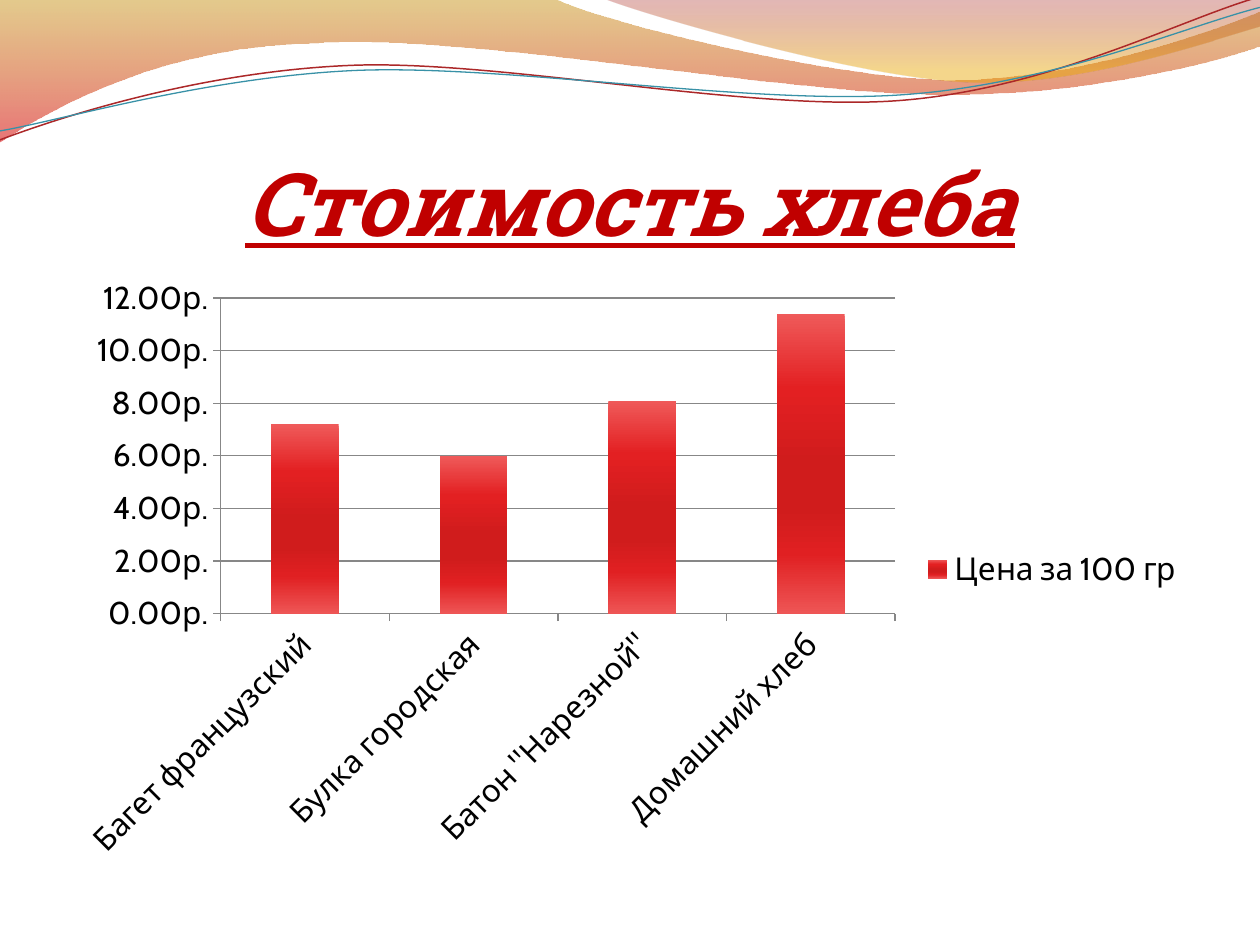
import lxml.etree
import pptx
import pptx.chart.data
import pptx.dml.color
import pptx.enum.chart
import pptx.enum.text
import pptx.oxml.ns
import pptx.util
from pptx.util import Cm, Pt

qn = pptx.oxml.ns.qn

# Waves in cm: a start point, then segments of one point (line) or three (Bezier curve).
ORANGE_WAVE = [
    [(0, 0)],
    [(11.18, -0.03)],
    [(12.09, 0.43), (16.87, 1.6), (19.25, 1.6)],
    [(21.67, 1.6), (24.33, 0.66), (25.4, 0.23)],
    [(25.43, 0.91)],
    [(24.97, 1.12), (22.1, 1.93), (18.95, 1.9)],
    [(15.8, 1.9), (9.7, 0.71), (6.53, 0.86)],
    [(3.28, 0.91), (1.17, 2.11), (-0.03, 2.87)],
    [(0, 0)],
]
YELLOW_WAVE = [
    [(12.17, -0.03)],
    [(12.93, 0.28), (17.32, 1.57), (19.53, 1.65)],
    [(21.74, 1.75), (24.41, 0.81), (25.4, 0.53)],
    [(25.4, 0)],
    [(12.17, -0.03)],
]
RED_LINE = [
    [(0, 2.82)],
    [(1.22, 2.36), (4.01, 1.45), (7.04, 1.32)],
    [(10.03, 1.19), (15.06, 2.26), (18.11, 2.03)],
    [(21.16, 1.8), (23.83, 0.38), (25.35, -0.05)],
]
TEAL_LINE = [
    [(0, 2.64)],
    [(1.19, 2.44), (4.17, 1.55), (7.19, 1.42)],
    [(10.24, 1.3), (15.16, 2.13), (18.21, 1.91)],
    [(21.23, 1.7), (23.9, 0.53), (25.4, 0.15)],
]
BAR_STOPS = [(0, "EF5A5A", 100), (25, "E32022", 100), (50, "D01C1C", 100),
             (65, "D01C1C", 100), (80, "E02022", 100), (100, "EE5555", 100)]
PRICES = {
    "Багет французский": 7.2,
    "Булка городская": 6,
    'Батон "Нарезной"': 8.1,
    "Домашний хлеб": 11.4,
}


def rgb(value):
    return pptx.dml.color.RGBColor.from_string(value)


def set_gradient(fill, element, stops):
    """Fill from top to bottom with (position %, colour, opacity %) stops."""
    fill.gradient()
    fill.gradient_angle = 270
    gs_list = next(element.iter(qn("a:gsLst")))
    gs_list.clear()
    for position, color, opacity in stops:
        gs = lxml.etree.SubElement(gs_list, qn("a:gs"), pos=str(position * 1000))
        clr = lxml.etree.SubElement(gs, qn("a:srgbClr"), val=color)
        if opacity < 100:
            lxml.etree.SubElement(clr, qn("a:alpha"), val=str(opacity * 1000))


def add_path(slide, outline, close):
    """Build a freeform through all points, then join each triple into a Bezier curve."""
    points = [(Cm(x), Cm(y)) for segment in outline for x, y in segment]
    builder = slide.shapes.build_freeform(*points[0])
    builder.add_line_segments(points[1:], close=close)
    sp = builder.convert_to_shape()
    sp.shadow.inherit = False
    lines = iter(list(sp._element.iter(qn("a:lnTo"))))
    for segment in outline[1:]:
        line = next(lines)
        if len(segment) == 3:
            curve = lxml.etree.Element(qn("a:cubicBezTo"))
            line.addprevious(curve)
            for part in (line, next(lines), next(lines)):
                curve.append(part[0])
                part.getparent().remove(part)
    return sp


def add_wave(slide, outline, stops):
    sp = add_path(slide, outline, close=True)
    set_gradient(sp.fill, sp._element, stops)
    sp.line.fill.background()


def add_wave_line(slide, outline, color, width):
    sp = add_path(slide, outline, close=False)
    sp.fill.background()
    sp.line.color.rgb = rgb(color)
    sp.line.width = Pt(width)


def set_title(slide, text):
    title = slide.shapes.title
    title.left, title.top, title.width, title.height = Cm(1.27), Cm(1.95), Cm(22.86), Cm(3.18)
    tf = title.text_frame
    tf.text = text
    tf.auto_size = pptx.enum.text.MSO_AUTO_SIZE.NONE
    tf.vertical_anchor = pptx.enum.text.MSO_ANCHOR.BOTTOM
    tf.margin_left = tf.margin_right = tf.margin_bottom = 0
    tf.margin_top = Cm(0.13)
    p = tf.paragraphs[0]
    p.alignment = pptx.enum.text.PP_ALIGN.CENTER
    font = p.runs[0].font
    font.name, font.size, font.color.rgb = "Roboto Slab", Pt(50), rgb("C00000")
    font.bold = font.italic = font.underline = True


def add_price_chart(slide):
    data = pptx.chart.data.CategoryChartData()
    data.categories = list(PRICES)
    data.add_series("Цена за 100 гр", list(PRICES.values()))
    chart = slide.shapes.add_chart(
        pptx.enum.chart.XL_CHART_TYPE.COLUMN_CLUSTERED,
        Cm(1.27), Cm(5.38), Cm(22.86), Cm(12.19), data).chart
    chart.has_title = False
    chart.font.name, chart.font.size, chart.font.color.rgb = "Cabin", Pt(18), rgb("000000")
    chart.has_legend = True
    chart.legend.position = pptx.enum.chart.XL_LEGEND_POSITION.RIGHT
    chart.legend.include_in_layout = False

    plot = chart.plots[0]
    plot.gap_width = 150
    plot.vary_by_categories = False
    series = plot.series[0]
    set_gradient(series.format.fill, series._element, BAR_STOPS)

    prices, breads = chart.value_axis, chart.category_axis
    prices.has_major_gridlines = True
    prices.tick_labels.number_format = '#,##0.00"р."'
    prices.tick_labels.number_format_is_linked = False
    for line in (prices.format.line, breads.format.line, prices.major_gridlines.format.line):
        line.color.rgb = rgb("878787")
        line.width = Pt(0.75)


def main():
    prs = pptx.Presentation()
    prs.slide_width, prs.slide_height = Cm(25.4), Cm(19.05)
    slide = prs.slides.add_slide(prs.slide_layouts.get_by_name("Title Only"))
    add_wave(slide, ORANGE_WAVE, [(0, "C38B00", 45), (100, "D60305", 55)])
    add_wave(slide, YELLOW_WAVE, [(0, "A11112", 30), (80, "E9A600", 45), (100, "E9A600", 45)])
    add_wave_line(slide, RED_LINE, "AC2829", 0.85)
    add_wave_line(slide, TEAL_LINE, "3891A7", 0.75)
    set_title(slide, "Стоимость хлеба")
    add_price_chart(slide)
    prs.save("out.pptx")


if __name__ == "__main__":
    main()
